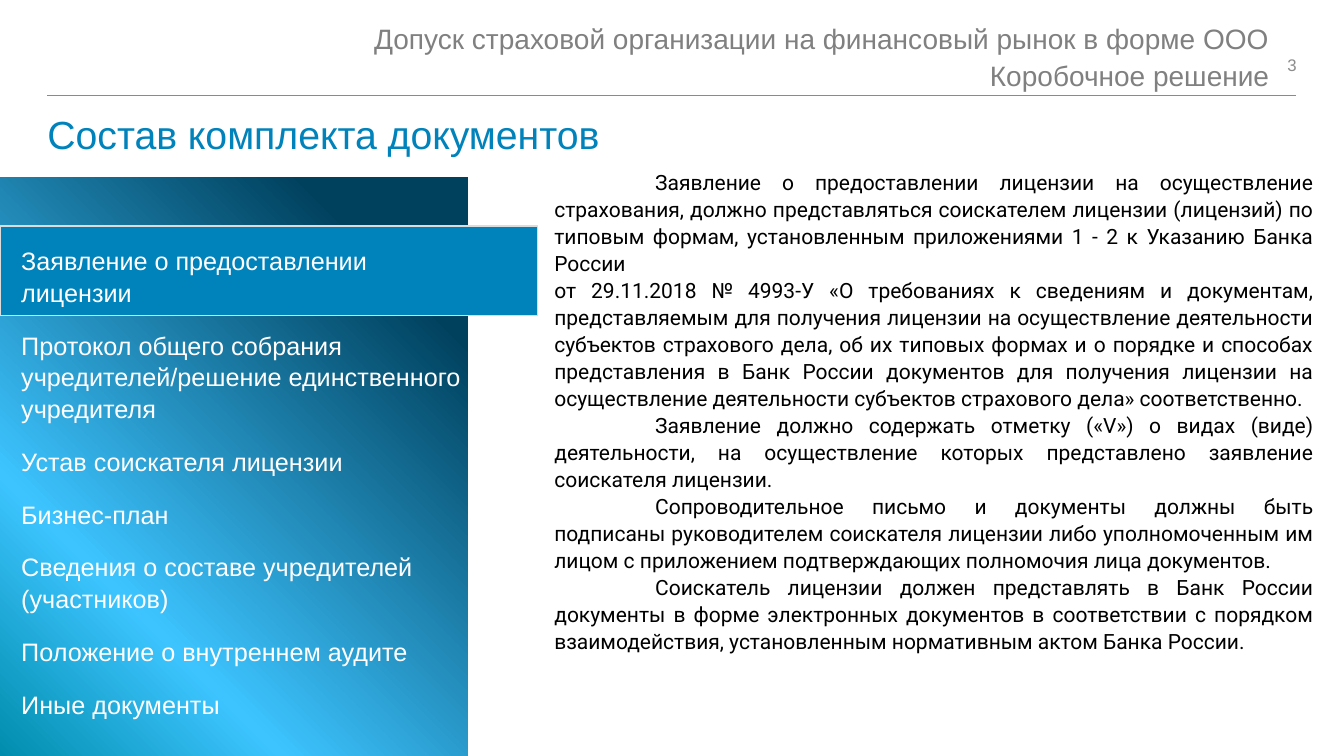
from copy import deepcopy

from pptx import Presentation
from pptx.dml.color import RGBColor
from pptx.enum.shapes import MSO_CONNECTOR as Connector, MSO_SHAPE as Preset
from pptx.enum.text import MSO_ANCHOR as Anchor, MSO_AUTO_SIZE as AutoSize, PP_ALIGN as Align
from pptx.oxml.ns import qn
from pptx.oxml.xmlchemy import OxmlElement
from pptx.util import Inches, Pt

HEADER = ["Допуск страховой организации на финансовый рынок в форме ООО", "Коробочное решение"]
DOCUMENTS = [
    "Заявление о предоставлении лицензии",
    "Протокол общего собрания учредителей/решение единственного учредителя",
    "Устав соискателя лицензии",
    "Бизнес-план",
    "Сведения о составе учредителей (участников)",
    "Положение о внутреннем аудите",
    "Иные документы",
]
REQUIREMENTS = [
    "Заявление о предоставлении лицензии на осуществление страхования, должно представляться "
    "соискателем лицензии (лицензий) по типовым формам, установленным приложениями 1 - 2 "
    "к Указанию Банка России\nот 29.11.2018 № 4993-У «О требованиях к сведениям и документам, "
    "представляемым для получения лицензии на осуществление деятельности субъектов страхового "
    "дела, об их типовых формах и о порядке и способах представления в Банк России документов "
    "для получения лицензии на осуществление деятельности субъектов страхового дела» "
    "соответственно.",
    "Заявление должно содержать отметку («V») о видах (виде) деятельности, на осуществление "
    "которых представлено заявление соискателя лицензии.",
    "Сопроводительное письмо и документы должны быть подписаны руководителем соискателя "
    "лицензии либо уполномоченным им лицом с приложением подтверждающих полномочия лица "
    "документов.",
    "Соискатель лицензии должен представлять в Банк России документы в форме электронных "
    "документов в соответствии с порядком взаимодействия, установленным нормативным актом "
    "Банка России.",
]


def color(hex_code):
    return RGBColor.from_string(hex_code)


def assign(target, formats):
    for name, value in formats.items():
        setattr(target, name, value)


class SlideBuilder:
    """Draws on one slide; lengths are percent of the slide's width and height."""

    BLUE, WHITE, BLACK = "0082BB", "FFFFFF", "000000"
    GREY, RULE_GREY, NUMBER_GREY, BORDER = "808080", "888A8D", "8C8C8C", "DCDCDD"

    def __init__(self, deck):
        self.width, self.height = deck.slide_width, deck.slide_height
        self.slide = deck.slides.add_slide(deck.slide_layouts[1])
        self.shapes = self.slide.shapes

    def x(self, share):
        return round(self.width * share / 100)

    def y(self, share):
        return round(self.height * share / 100)

    def frame(self, left, top, width, height):
        return self.x(left), self.y(top), self.x(width), self.y(height)

    def fill_text(self, box, lines, size, hex_code, font="Arial", inset=True,
                  anchor=Anchor.TOP, margins=None, **paragraph_format):
        text = box.text_frame
        assign(text, {"word_wrap": True, "auto_size": AutoSize.NONE, "vertical_anchor": anchor})
        if not inset:
            assign(text, dict.fromkeys(
                ("margin_left", "margin_top", "margin_right", "margin_bottom"), 0))
        for index, line in enumerate(lines):
            paragraph = text.add_paragraph() if index else text.paragraphs[0]
            paragraph.text = line
            assign(paragraph, paragraph_format)
            if margins:
                properties = paragraph._p.get_or_add_pPr()
                for name, value in zip(("marL", "indent"), margins):
                    properties.set(name, str(Inches(value)))
            for run in paragraph.runs:
                assign(run.font, {"name": font, "size": Pt(size)})
                run.font.color.rgb = color(hex_code)

    def text(self, area, lines, *style, **formats):
        self.fill_text(self.shapes.add_textbox(*self.frame(*area)), lines, *style, **formats)

    def placeholder(self, index, area, lines, *style, **formats):
        holder = self.slide.placeholders[index]
        assign(holder, dict(zip(("left", "top", "width", "height"), self.frame(*area))))
        self.fill_text(holder, lines, *style, **formats)
        # Lift above the shapes drawn so far
        self.shapes.element.append(holder.element)
        return holder

    def unbulleted(self, *args, **formats):
        holder = self.placeholder(*args, margins=(0, 0), **formats)
        for paragraph in holder.text_frame.paragraphs:
            paragraph._p.get_or_add_pPr().append(OxmlElement("a:buNone"))

    def rectangle(self, area):
        box = self.shapes.add_shape(Preset.RECTANGLE, *self.frame(*area))
        box.shadow.inherit = False
        return box

    def bar(self, area, fill, border, weight):
        box = self.rectangle(area)
        box.fill.solid()
        box.fill.fore_color.rgb = color(fill)
        box.line.color.rgb = color(border)
        box.line.width = Pt(weight)

    def gradient(self, area, stops, angle, rotation):
        box = self.rectangle(area)
        box.rotation = rotation
        box.line.fill.background()
        box.fill.gradient()
        box.fill.gradient_angle = angle
        stop_list = box.element.spPr.find(".//" + qn("a:gsLst"))
        while len(stop_list) < len(stops):
            stop_list.append(deepcopy(stop_list[0]))
        for stop, (position, hex_code) in zip(box.fill.gradient_stops, stops):
            stop.position = position
            stop.color.rgb = color(hex_code)

    def rule(self, left, right, top, hex_code, weight):
        line = self.shapes.add_connector(
            Connector.STRAIGHT, self.x(left), self.y(top), self.x(right), self.y(top))
        line.line.color.rgb = color(hex_code)
        line.line.width = Pt(weight)
        line.element.spPr.append(OxmlElement("a:effectLst"))


def main():
    deck = Presentation()
    assign(deck, {"slide_width": Inches(13.33), "slide_height": Inches(7.5)})
    page = SlideBuilder(deck)

    # Header with rule and page number
    page.rule(3.53, 96.45, 12.67, page.RULE_GREY, 0.5)
    page.text((-6.45, 2.4, 100.9, 8.8), HEADER, 20, page.GREY,
              inset=False, alignment=Align.RIGHT, line_spacing=1.1)
    page.text((90.4, 6.27, 6.08, 4.67), ["3"], 12, page.NUMBER_GREY,
              inset=False, anchor=Anchor.MIDDLE, alignment=Align.RIGHT)

    # Title
    page.placeholder(0, (3.53, 15.33, 92.95, 8.8), ["Состав комплекта документов"], 28, page.BLUE,
                     inset=False, alignment=Align.LEFT, line_spacing=0.9)

    # Document menu with the current item highlighted
    page.gradient((-4.13, 30.8, 43.06, 61.87),
                  [(0.16, "00415E"), (0.73, "3DC4FF"), (1, "008DAD")], angle=315, rotation=90)
    page.bar((0, 29.87, 40, 11.87), page.BLUE, page.BORDER, 1)
    page.unbulleted(1, (0.83, 31.6, 35.33, 62.67), DOCUMENTS, 18, page.WHITE,
                    alignment=Align.LEFT, line_spacing=1.05,
                    space_before=Pt(0), space_after=Pt(15))

    # Requirements for the application
    page.text((36.76, 21.6, 61.74, 62.53), REQUIREMENTS, 15, page.BLACK, font="Roboto",
              margins=(0.5, 1), alignment=Align.JUSTIFY, line_spacing=1.07)

    deck.save("out.pptx")


if __name__ == "__main__":
    main()
